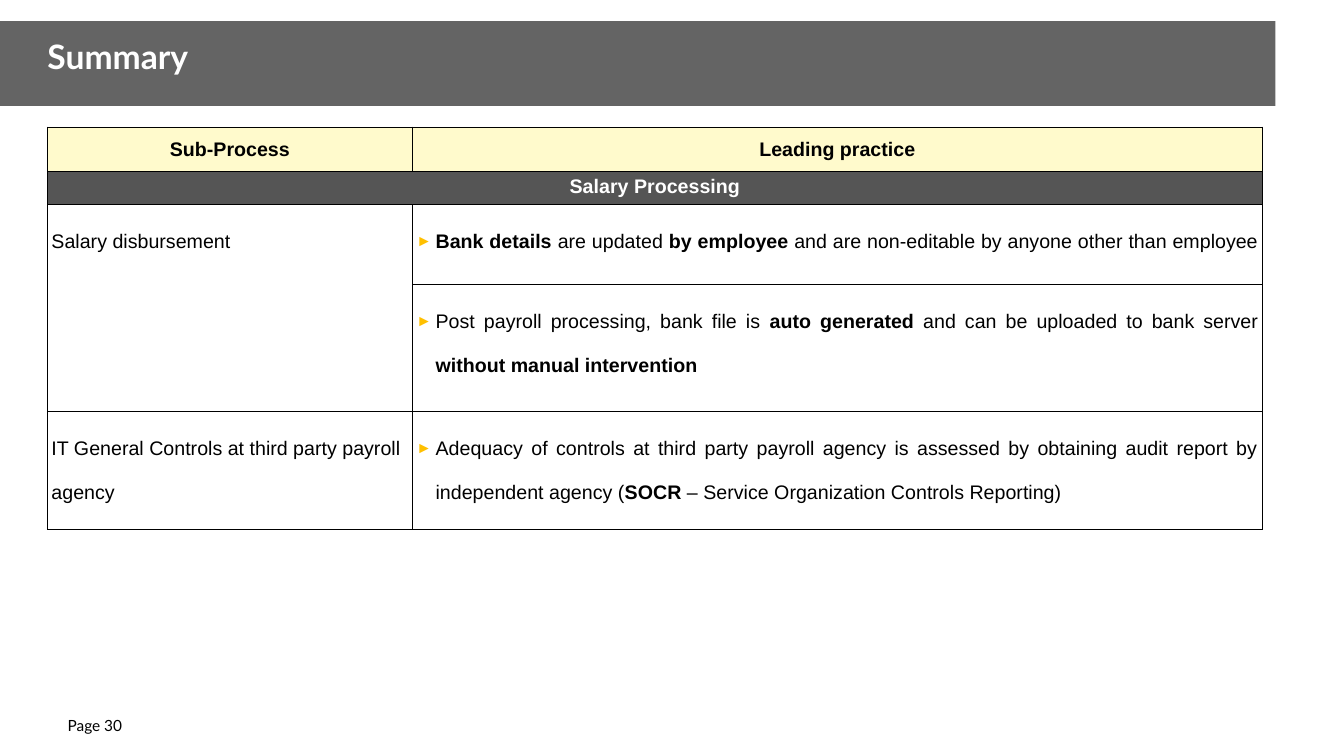
from lxml import etree
from pptx import Presentation
from pptx import util as u
from pptx.dml.color import RGBColor
from pptx.enum import shapes, text
from pptx.oxml.ns import qn


def rgb(value):
    return RGBColor.from_string(value)


class Deck:
    """Style and current slide, with lengths in percent of the slide size."""

    heading, body = "Lato", "Arial"
    black, white, band_gray, row_gray = "000000", "FFFFFF", "646464", "555555"
    cream, amber = "FFFACC", "FFC000"

    def __init__(self):
        self.prs = Presentation()
        self.prs.slide_width, self.prs.slide_height = u.Inches(13.33), u.Inches(7.5)
        self.s = self.prs.slides.add_slide(self.prs.slide_layouts[6])

    def x(self, share):
        return round(self.prs.slide_width * share / 100)

    def y(self, share):
        return round(self.prs.slide_height * share / 100)

    def box(self, left, top, width, height):
        return self.x(left), self.y(top), self.x(width), self.y(height)

    def font(self, r, name, size, color, bold=False):
        r.font.name, r.font.size, r.font.bold = name, u.Pt(size), bold
        r.font.color.rgb = rgb(color)

    def label(self, area, words, size, color, bold=False, spacing=1.0):
        tf = self.s.shapes.add_textbox(*self.box(*area)).text_frame
        tf.word_wrap = True
        tf.margin_left = tf.margin_right = tf.margin_top = tf.margin_bottom = 0
        p = tf.paragraphs[0]
        p.text, p.line_spacing = words, spacing
        self.font(p.runs[0], self.heading, size, color, bold)

    def band(self, area, color):
        sp = self.s.shapes.add_shape(shapes.MSO_SHAPE.RECTANGLE, *self.box(*area))
        sp.shadow.inherit = False
        sp.fill.solid()
        sp.fill.fore_color.rgb = rgb(color)
        sp.line.fill.background()

    def table(self, left, top, cols, rows):
        area = self.box(left, top, sum(cols), sum(rows))
        tbl = self.s.shapes.add_table(len(rows), len(cols), *area).table
        tbl.first_row = tbl.horz_banding = False
        for col, width in zip(tbl.columns, cols):
            col.width = self.x(width)
        for row, height in zip(tbl.rows, rows):
            row.height = self.y(height)
        for cell in tbl.iter_cells():
            self.borders(cell)
            cell.fill.background()
        return tbl

    def borders(self, cell):
        tcPr = cell._tc.get_or_add_tcPr()
        for side in ("a:lnL", "a:lnR", "a:lnT", "a:lnB"):
            ln = etree.SubElement(tcPr, qn(side), w=str(u.Pt(0.5)))
            fill = etree.SubElement(ln, qn("a:solidFill"))
            etree.SubElement(fill, qn("a:srgbClr"), val=self.black)

    def cell(self, cell, words, inset=0.04, color=black, fill=None):
        cell.margin_left = cell.margin_right = cell.margin_top = u.Inches(inset)
        cell.margin_bottom = 0
        if fill:
            cell.fill.solid()
            cell.fill.fore_color.rgb = rgb(fill)
        p = cell.text_frame.paragraphs[0]
        for i, part in enumerate(words.split("**")):
            if part:
                r = p.add_run()
                r.text = part
                self.font(r, self.body, 14, color, i % 2 == 1)
        return p

    def header(self, cell, words, **style):
        p = self.cell(cell, f"**{words}**", **style)
        p.alignment = text.PP_ALIGN.CENTER

    def entry(self, cell, words):
        p = self.cell(cell, words)
        p.line_spacing = 2.0
        return p

    def bullet(self, cell, words):
        p = self.entry(cell, words)
        p.alignment = text.PP_ALIGN.JUSTIFY
        pPr = p._p.get_or_add_pPr()
        indent = u.Inches(0.19)
        pPr.set("marL", str(indent))
        pPr.set("indent", str(-indent))
        clr = etree.SubElement(pPr, qn("a:buClr"))
        etree.SubElement(clr, qn("a:srgbClr"), val=self.amber)
        etree.SubElement(pPr, qn("a:buSzPct"), val="80000")
        etree.SubElement(pPr, qn("a:buFont"), typeface=self.body)
        etree.SubElement(pPr, qn("a:buChar"), char="►")


def main():
    d = Deck()
    d.label((5.03, 94.67, 7.88, 2.93), "Page 30", 11, d.black)
    d.band((0, 2.8, 94.9, 11.2), d.band_gray)

    tbl = d.table(3.53, 16.8, (27.16, 63.24), (5.87, 4.4, 10.53, 16.8, 15.6))
    tbl.cell(1, 0).merge(tbl.cell(1, 1))
    tbl.cell(2, 0).merge(tbl.cell(3, 0))
    for col, words in enumerate(("Sub-Process", "Leading practice")):
        d.header(tbl.cell(0, col), words, inset=0.01, fill=d.cream)
        tbl.cell(0, col).vertical_anchor = text.MSO_ANCHOR.MIDDLE
    d.header(tbl.cell(1, 0), "Salary Processing", color=d.white, fill=d.row_gray)
    d.entry(tbl.cell(2, 0), "Salary disbursement")
    d.entry(tbl.cell(4, 0), "IT General Controls at third party payroll agency")
    practices = (
        "**Bank details **are updated **by employee **and are non-editable "
        "by anyone other than employee ",
        "Post payroll processing, bank file is **auto generated **and can be "
        "uploaded to bank server **without manual intervention**",
        "Adequacy of controls at third party payroll agency is assessed by obtaining "
        "audit report by independent agency (**SOCR** – Service Organization "
        "Controls Reporting)",
    )
    for row, words in enumerate(practices, 2):
        d.bullet(tbl.cell(row, 1), words)

    d.label((3.53, 5.6, 91.3, 11.2), "Summary", 24, d.white, bold=True, spacing=0.85)
    d.prs.save("out.pptx")


if __name__ == "__main__":
    main()
